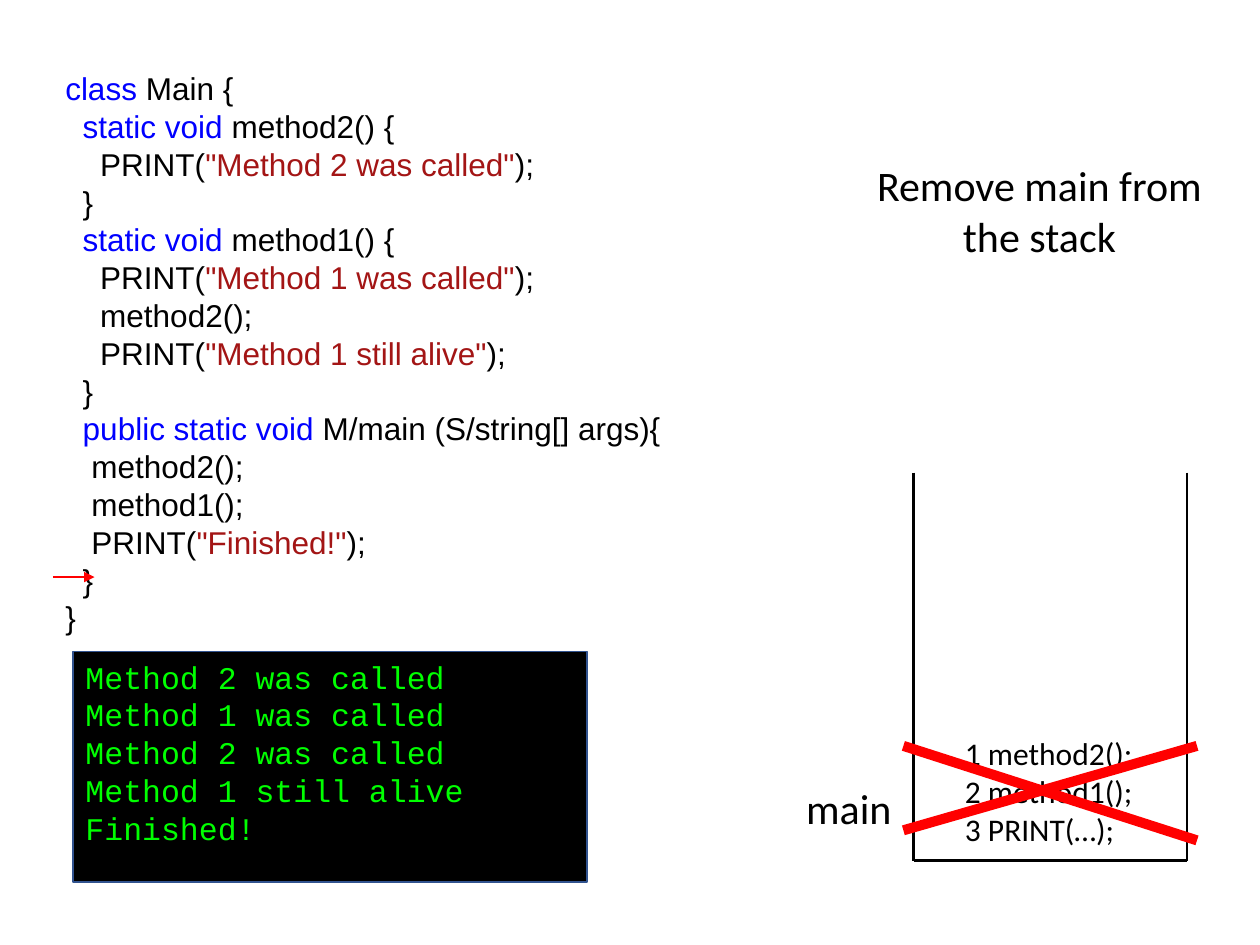
from lxml.etree import SubElement
from pptx import Presentation
from pptx.dml.color import RGBColor
from pptx.enum.shapes import MSO_CONNECTOR, MSO_SHAPE
from pptx.enum.text import MSO_ANCHOR, PP_ALIGN
from pptx.oxml.ns import qn
from pptx.util import Inches, Pt

BLACK, BLUE, BROWN, RED, GREEN = "000000", "0000FF", "A31515", "FF0000", "00FF00"


def print_line(indent, message):
    return [(" " * indent + "PRINT(", BLACK), (f'"{message}"', BROWN), (");", BLACK)]


def header_line(indent, keywords, rest):
    return [(" " * indent + keywords, BLUE), (" " + rest, BLACK)]


def plain_lines(color, *lines):
    return [[(line, color)] for line in lines]


CODE = [
    header_line(0, "class", "Main {"),
    header_line(2, "static void", "method2() {"),
    print_line(4, "Method 2 was called"),
    *plain_lines(BLACK, "  }"),
    header_line(2, "static void", "method1() {"),
    print_line(4, "Method 1 was called"),
    *plain_lines(BLACK, "    method2();"),
    print_line(4, "Method 1 still alive"),
    *plain_lines(BLACK, "  }"),
    header_line(2, "public static void", "M/main (S/string[] args){"),
    *plain_lines(BLACK, "   method2();", "   method1();"),
    print_line(3, "Finished!"),
    *plain_lines(BLACK, "  }", "}"),
]
CONSOLE = plain_lines(GREEN, "Method 2 was called", "Method 1 was called",
                      "Method 2 was called", "Method 1 still alive", "Finished!")
FRAME_LINES = plain_lines(BLACK, "1 method2();", "2 method1();", "3 PRINT(…);")
FRAME_NAME = plain_lines(BLACK, "main")
CAPTION = [[("Remove main from", BLACK), ("\v", BLACK), ("the stack", BLACK)]]

STACK_LEFT, STACK_RIGHT, STACK_TOP, STACK_BOTTOM = 7.25, 9.42, 3.75, 6.83
STACK_WALLS = [
    (STACK_LEFT, STACK_TOP, STACK_LEFT, STACK_BOTTOM),
    (STACK_RIGHT, STACK_TOP, STACK_RIGHT, STACK_BOTTOM),
    (STACK_LEFT, STACK_BOTTOM, STACK_RIGHT, STACK_BOTTOM),
]
CROSS = [(7.17, 5.92, 9.5, 6.67), (7.17, 6.59, 9.5, 5.92)]
STEP_ARROW = (0.42, 4.58, 0.75, 4.58)


def rgb(color):
    return RGBColor.from_string(color)


def write(box, lines, font, size, align=PP_ALIGN.LEFT):
    """Fill a box with lines, each a list of (text, colour) spans."""
    frame = box.text_frame
    frame.word_wrap = True
    frame.vertical_anchor = MSO_ANCHOR.TOP
    for index, spans in enumerate(lines):
        para = frame.add_paragraph() if index else frame.paragraphs[0]
        para.alignment = align
        for text, color in spans:
            if text == "\v":
                para.add_line_break()
                continue
            span = para.add_run()
            span.text = text
            for name, value in {"name": font, "size": Pt(size)}.items():
                setattr(span.font, name, value)
            span.font.color.rgb = rgb(color)


def add_text(page, place, *content):
    write(page.shapes.add_textbox(*map(Inches, place)), *content)


def add_line(page, ends, color, width, arrow=False):
    line = page.shapes.add_connector(MSO_CONNECTOR.STRAIGHT, *map(Inches, ends))
    line.line.color.rgb = rgb(color)
    line.line.width = Pt(width)
    if arrow:
        SubElement(line.line._get_or_add_ln(), qn("a:tailEnd"), type="triangle")
    SubElement(line._element.spPr, qn("a:effectLst"))


def add_console(page, place, lines):
    box = page.shapes.add_shape(MSO_SHAPE.RECTANGLE, *map(Inches, place))
    box.shadow.inherit = False
    box.fill.solid()
    box.fill.fore_color.rgb = rgb(BLACK)
    box.line.color.rgb = rgb("31538F")
    box.line.width = Pt(1)
    write(box, lines, "Courier New", 18)


def main():
    deck = Presentation()
    deck.slide_width, deck.slide_height = Inches(10), Inches(7.5)
    page = deck.slides.add_slide(deck.slide_layouts[6])

    add_text(page, (0.42, 0.5, 7.67, 4.64), CODE, "Arial", 18)
    add_line(page, STEP_ARROW, RED, 1.25, arrow=True)
    for wall in STACK_WALLS:
        add_line(page, wall, BLACK, 1.5)
    add_text(page, (6.3, 6.16, 0.89, 0.5), FRAME_NAME, "Calibri", 24)
    add_text(page, (7.56, 5.78, 1.55, 1.01), FRAME_LINES, "Calibri", 18)
    add_console(page, (0.58, 5.17, 4.08, 1.83), CONSOLE)
    for stroke in CROSS:
        add_line(page, stroke, RED, 5.75)
    add_text(page, (6.85, 1.22, 2.8, 0.91), CAPTION, "Calibri", 24, PP_ALIGN.CENTER)
    deck.save("out.pptx")


if __name__ == "__main__":
    main()
